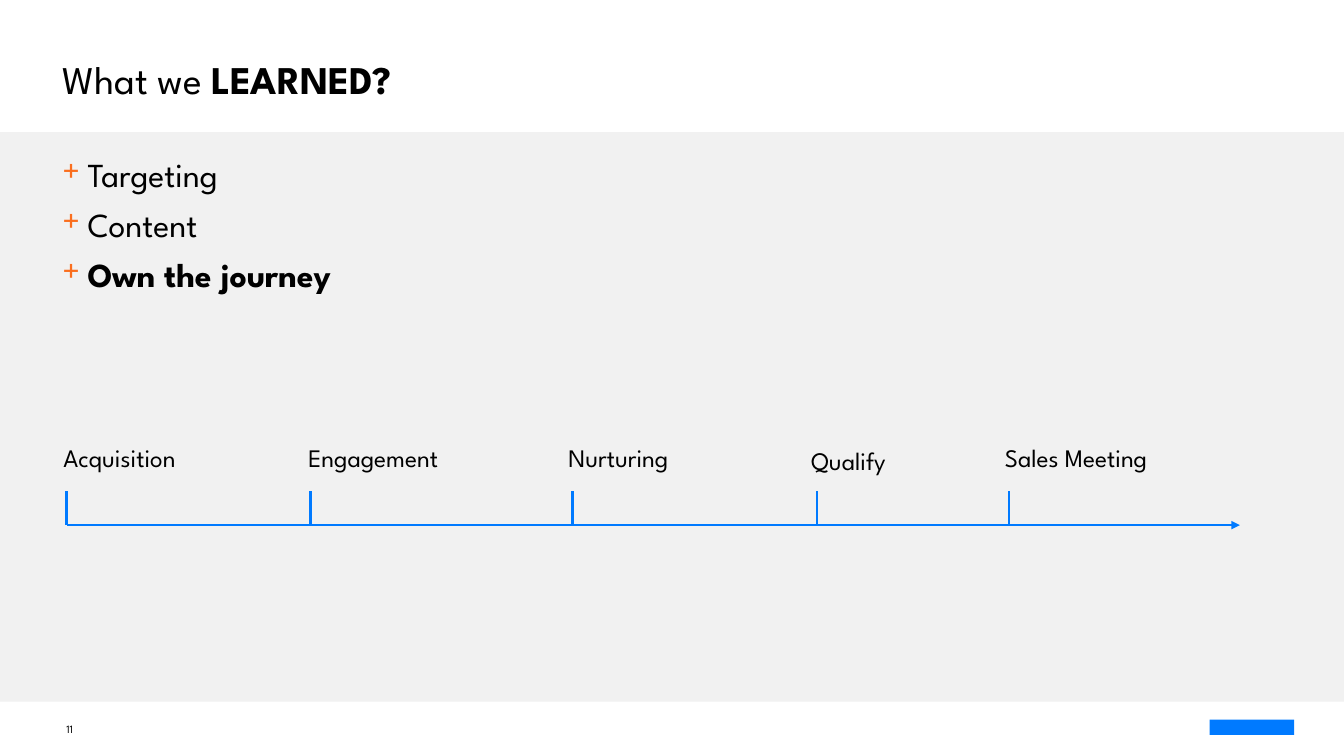
"""Build the slide on lessons learned, with a timeline of the customer journey."""
from dataclasses import dataclass

from lxml.etree import SubElement
from pptx import Presentation
from pptx.dml.color import RGBColor
from pptx.enum.shapes import MSO_CONNECTOR as Connector, MSO_SHAPE as Preset
from pptx.enum.text import MSO_ANCHOR as Anchor, PP_ALIGN as Align
from pptx.oxml.ns import qn
from pptx.util import Emu, Inches, Pt

SLIDE_WIDTH, SLIDE_HEIGHT = Inches(13.333), Inches(7.5)
COLUMNS, ROWS = 160, 90
FONT = "League Spartan"
COLORS = {"text": "000000", "band": "F1F1F1", "accent": "007AFF", "bullet": "FA6E1E"}
AXIS_ROW, TICK_ROW, AXIS_END = 62.52, 58.44, 147.6


@dataclass(frozen=True)
class Box:
    """Area on the grid, in columns and rows."""
    column: float
    row: float
    columns: float
    rows: float

    def place(self) -> tuple[Emu, Emu, Emu, Emu]:
        """Return left, top, width and height."""
        return across(self.column), down(self.row), across(self.columns), down(self.rows)


@dataclass(frozen=True)
class Stage:
    """Stage of the journey with its label and tick."""
    name: str
    label: Box
    tick: float


@dataclass(frozen=True)
class Lesson:
    """Bullet in the list of lessons."""
    text: str
    bold: bool = False


STAGES = (
    Stage("Acquisition", Box(6.36, 52.08, 18.36, 4.8), 7.92),
    Stage("Engagement", Box(35.52, 52.08, 21.72, 4.8), 36.96),
    Stage("Nurturing", Box(66.48, 52.08, 15.72, 4.8), 68.16),
    Stage("Qualify", Box(95.4, 52.44, 12.72, 4.8), 97.32),
    Stage("Sales Meeting", Box(118.44, 52.08, 22.92, 4.8), 120.12),
)
LESSONS = (Lesson("Targeting"), Lesson("Content"), Lesson("Own the journey", True))


def across(columns: float) -> Emu:
    """Turn columns into a length."""
    return Emu(round(SLIDE_WIDTH * columns / COLUMNS))


def down(rows: float) -> Emu:
    """Turn rows into a length."""
    return Emu(round(SLIDE_HEIGHT * rows / ROWS))


def color(name: str) -> RGBColor:
    """Look up a colour."""
    return RGBColor.from_string(COLORS[name])


def add_run(paragraph, text: str, size: float, bold: bool = False) -> None:
    """Add one formatted run."""
    run = paragraph.add_run()
    run.text = text
    run.font.name = FONT
    run.font.size = Pt(size)
    run.font.bold = bold
    run.font.color.rgb = color("text")


def add_text_frame(slide, box: Box, wrap: bool = True, anchor: Anchor = Anchor.TOP):
    """Add a text box and return its frame."""
    frame = slide.shapes.add_textbox(*box.place()).text_frame
    frame.word_wrap = wrap
    frame.vertical_anchor = anchor
    return frame


def add_block(slide, box: Box, fill: str) -> None:
    """Add a plain filled rectangle."""
    shape = slide.shapes.add_shape(Preset.RECTANGLE, *box.place())
    shape.shadow.inherit = False
    shape.fill.solid()
    shape.fill.fore_color.rgb = color(fill)
    shape.line.fill.background()


def add_line(slide, start: tuple[float, float], end: tuple[float, float], arrow: bool = False) -> None:
    """Add a timeline line between two grid points."""
    connector = slide.shapes.add_connector(
        Connector.STRAIGHT, across(start[0]), down(start[1]), across(end[0]), down(end[1]))
    connector.line.color.rgb = color("accent")
    connector.line.width = Pt(1.5)
    properties = connector._element.spPr
    if arrow:
        SubElement(properties.find(qn("a:ln")), qn("a:tailEnd"), type="triangle")
    SubElement(properties, qn("a:effectLst"))


def add_bullet(paragraph) -> None:
    """Give a paragraph a coloured plus sign with a hanging indent."""
    properties = paragraph._p.get_or_add_pPr()
    properties.set("marL", str(Inches(0.25)))
    properties.set("indent", str(-Inches(0.25)))
    SubElement(SubElement(properties, qn("a:buClr")), qn("a:srgbClr"), val=COLORS["bullet"])
    SubElement(properties, qn("a:buFont"), typeface=FONT)
    SubElement(properties, qn("a:buChar"), char="+")


def add_title(slide) -> None:
    """Place and fill the title."""
    title = slide.shapes.title
    title.left, title.top, title.width, title.height = Box(6.24, -1.56, 147.6, 14.4).place()
    title.text_frame.vertical_anchor = Anchor.BOTTOM
    paragraph = title.text_frame.paragraphs[0]
    paragraph.alignment = Align.LEFT
    paragraph.line_spacing = 0.9
    add_run(paragraph, "What we ", 28)
    add_run(paragraph, "LEARNED?", 28, True)


def add_lessons(slide) -> None:
    """Add the list of lessons."""
    frame = add_text_frame(slide, Box(6.24, 18.24, 147.6, 63.48))
    for index, lesson in enumerate(LESSONS):
        paragraph = frame.add_paragraph() if index else frame.paragraphs[0]
        add_bullet(paragraph)
        paragraph.line_spacing = 0.9
        if index:
            paragraph.space_before = Pt(10)
        add_run(paragraph, lesson.text, 24, lesson.bold)


def add_timeline(slide) -> None:
    """Add the axis with its labelled ticks."""
    add_line(slide, (STAGES[0].tick, AXIS_ROW), (AXIS_END, AXIS_ROW), arrow=True)
    for stage in STAGES:
        frame = add_text_frame(slide, stage.label, wrap=False)
        add_run(frame.paragraphs[0], stage.name, 18)
        add_line(slide, (stage.tick, AXIS_ROW), (stage.tick, TICK_ROW))


def main() -> None:
    """Build and save the presentation."""
    presentation = Presentation()
    presentation.slide_width, presentation.slide_height = SLIDE_WIDTH, SLIDE_HEIGHT
    slide = presentation.slides.add_slide(presentation.slide_layouts[5])
    add_block(slide, Box(0, 15.72, COLUMNS, 67.8), "band")
    add_title(slide)
    add_lessons(slide)
    add_timeline(slide)
    page_number = add_text_frame(slide, Box(6.72, 83.4, 36, 4.8), anchor=Anchor.BOTTOM)
    add_run(page_number.paragraphs[0], "11", 8)
    add_block(slide, Box(144, 85.68, 10.08, 1.8), "accent")
    presentation.save("out.pptx")


if __name__ == "__main__":
    main()
